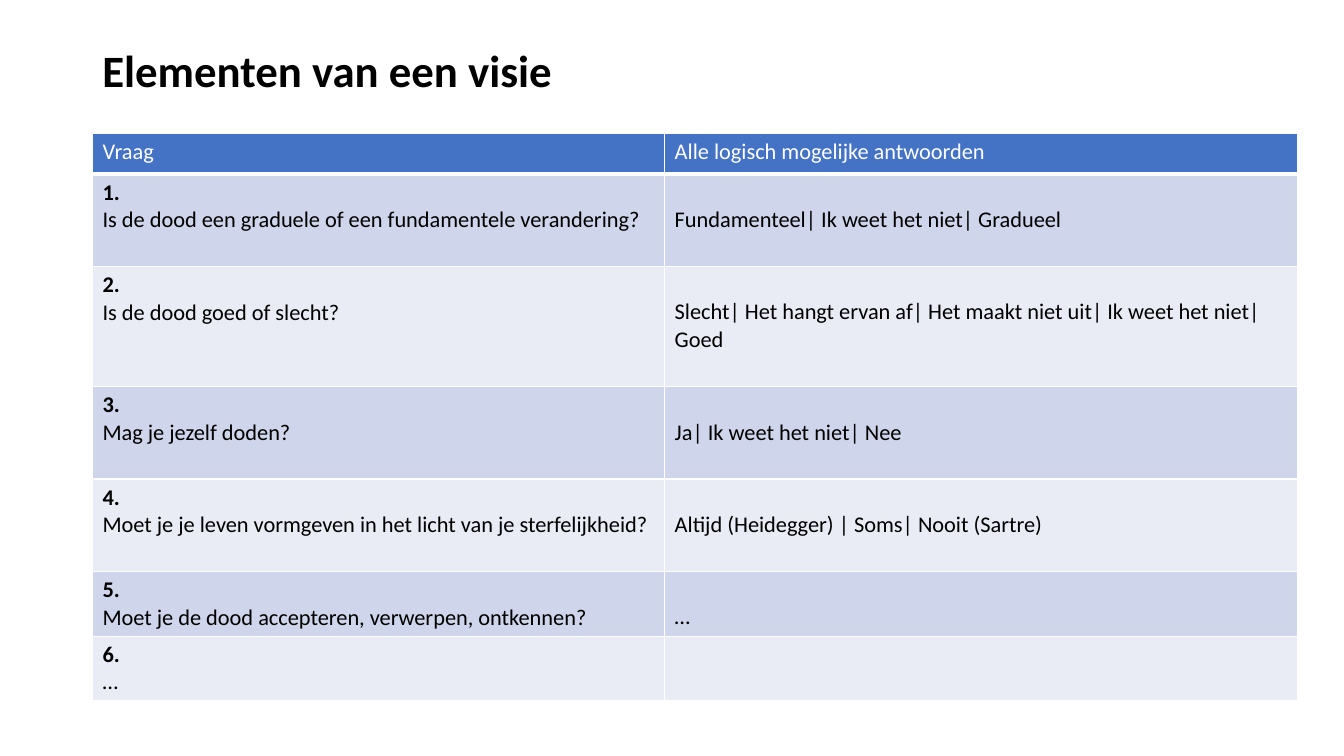
from lxml.etree import SubElement
from pptx import Presentation
from pptx.dml.color import RGBColor
from pptx.enum.text import MSO_ANCHOR as Anchor
from pptx.oxml.ns import qn
from pptx.util import Cm, Pt

BLACK = RGBColor(0x00, 0x00, 0x00)
WHITE = RGBColor(0xFF, 0xFF, 0xFF)
HEADER_BLUE = RGBColor(0x44, 0x72, 0xC4)
BANDS = (RGBColor(0xCF, 0xD5, 0xEA), RGBColor(0xE9, 0xEB, 0xF5))

LEFT = Cm(2.33)
COLUMN_WIDTHS = (Cm(14.42), Cm(15.95))
HEADER_HEIGHT = Cm(1.03)
ANSWER_TOP = Cm(0.81)  # puts the answer level with the question under its number

HEADINGS = ("Vraag", "Alle logisch mogelijke antwoorden")
# question, answers, row height
QUESTIONS = (
    ("Is de dood een graduele of een fundamentele verandering?",
     "Fundamenteel| Ik weet het niet| Gradueel", Cm(2.33)),
    ("Is de dood goed of slecht?",
     "Slecht| Het hangt ervan af| Het maakt niet uit| Ik weet het niet| Goed", Cm(3.03)),
    ("Mag je jezelf doden?", "Ja| Ik weet het niet| Nee", Cm(2.33)),
    ("Moet je je leven vormgeven in het licht van je sterfelijkheid?",
     "Altijd (Heidegger) | Soms| Nooit (Sartre)", Cm(2.33)),
    ("Moet je de dood accepteren, verwerpen, ontkennen?", "…", Cm(1.63)),
    ("…", "", Cm(1.63)),
)


def write(para, text, size=16, color=BLACK, bold=False):
    para.font.size = Pt(size)
    span = para.add_run()
    span.text = text
    font = span.font
    font.name = "Calibri"
    font.size = Pt(size)
    font.bold = bold
    font.color.rgb = color


def add_border(cell, side, points):
    line = SubElement(cell._tc.get_or_add_tcPr(), qn(f"a:ln{side}"), w=str(Pt(points)))
    fill = SubElement(line, qn("a:solidFill"))
    SubElement(fill, qn("a:srgbClr"), val=str(WHITE))


def style_cell(cell, color, bottom=1):
    for side in "LRT":
        add_border(cell, side, 1)
    add_border(cell, "B", bottom)
    cell.fill.solid()
    cell.fill.fore_color.rgb = color


def add_title(page, text):
    box = page.shapes.add_textbox(LEFT, Cm(0), Cm(29.21), Cm(3.68))
    frame = box.text_frame
    frame.word_wrap = True
    frame.vertical_anchor = Anchor.MIDDLE
    para = frame.paragraphs[0]
    para.line_spacing = 0.9
    write(para, text, size=32, bold=True)


def add_question_table(page):
    height = HEADER_HEIGHT + sum(row[2] for row in QUESTIONS)
    table = page.shapes.add_table(len(QUESTIONS) + 1, 2, LEFT, Cm(3.35),
                                  sum(COLUMN_WIDTHS), height).table
    for column, width in zip(table.columns, COLUMN_WIDTHS):
        column.width = width

    table.rows[0].height = HEADER_HEIGHT
    for index, heading in enumerate(HEADINGS):
        cell = table.cell(0, index)
        style_cell(cell, HEADER_BLUE, bottom=3)
        write(cell.text_frame.paragraphs[0], heading, color=WHITE)

    for number, (question, answers, row_height) in enumerate(QUESTIONS, start=1):
        table.rows[number].height = row_height
        question_cell, answer_cell = table.cell(number, 0), table.cell(number, 1)
        for cell in (question_cell, answer_cell):
            style_cell(cell, BANDS[(number - 1) % 2])
        frame = question_cell.text_frame
        write(frame.paragraphs[0], f"{number}.", bold=True)
        write(frame.add_paragraph(), question)
        if answers:
            answer_cell.margin_top = ANSWER_TOP
            write(answer_cell.text_frame.paragraphs[0], answers)


def main():
    deck = Presentation()
    deck.slide_width, deck.slide_height = Cm(33.87), Cm(19.05)
    page = deck.slides.add_slide(deck.slide_layouts[6])
    add_title(page, "Elementen van een visie")
    add_question_table(page)
    deck.save("out.pptx")


if __name__ == "__main__":
    main()
